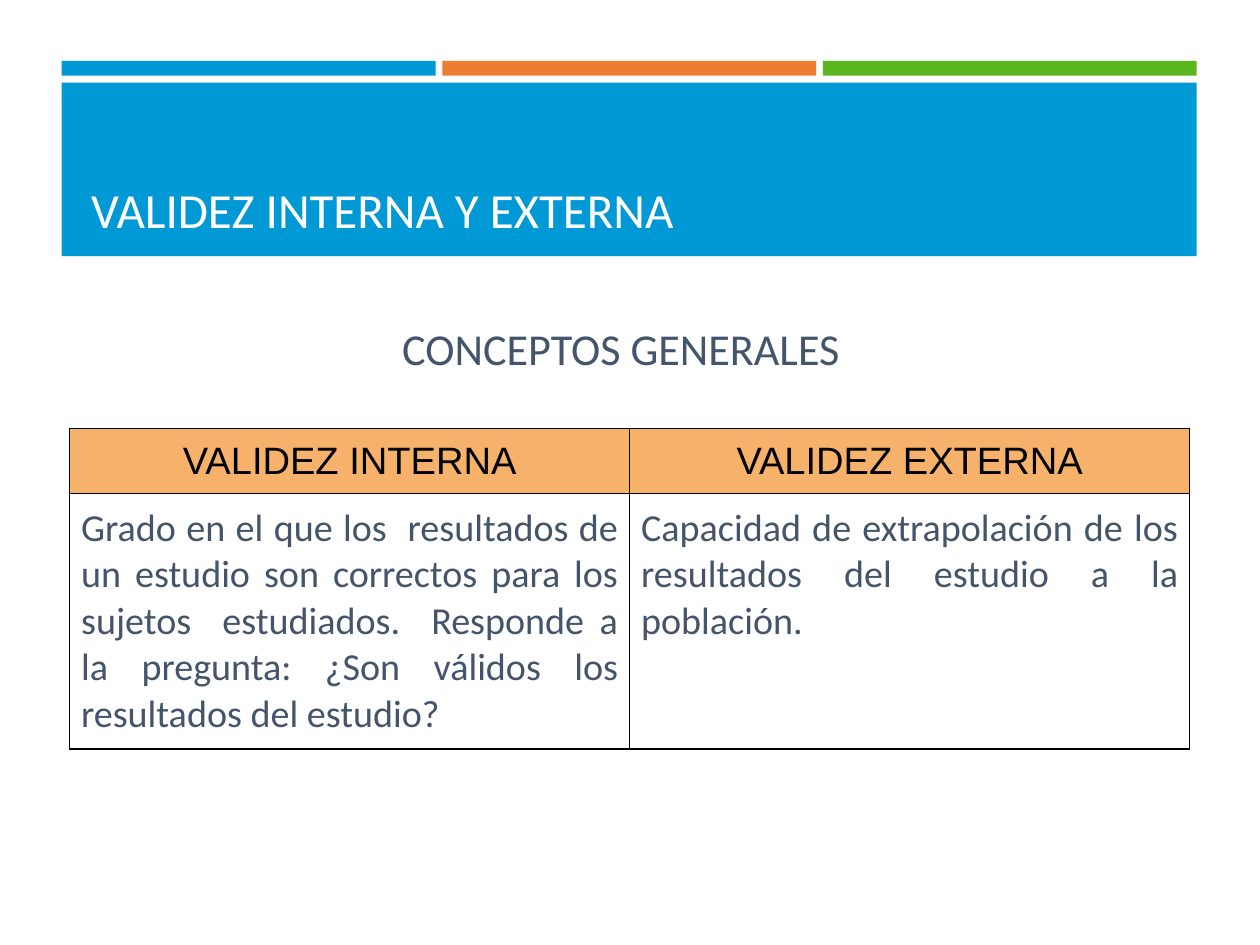
from pptx import Presentation
from pptx.dml.color import RGBColor
from pptx.enum.shapes import MSO_SHAPE as Shape
from pptx.enum.text import MSO_ANCHOR as Anchor, PP_ALIGN as Align
from pptx.oxml import parse_xml
from pptx.oxml.ns import nsdecls
from pptx.util import Pt

COLORS = {"blue": "0099D5", "orange": "ED7D31", "green": "5BB51C", "peach": "F6B26B",
          "slate": "44546A", "white": "FFFFFF", "black": "000000"}
TITLE = "VALIDEZ INTERNA Y EXTERNA"
SUBTITLE = "CONCEPTOS GENERALES"
CONCEPTS = [
    ("VALIDEZ INTERNA", "VALIDEZ EXTERNA"),
    ("Grado en el que los  resultados de un estudio son correctos para los sujetos  estudiados.  "
     "Responde a la pregunta: ¿Son válidos los resultados del estudio?",
     "Capacidad de extrapolación de los resultados del estudio a la población."),
]
ROW_STYLES = [("Arial", "black", Align.CENTER, 0), ("Calibri", "slate", Align.JUSTIFY, 3.6)]
ROW_HEIGHTS = [40.4, 161]
BOTTOM_MARGINS = [4.8, 7.2]
COLUMN_WIDTH = 352.8
STRIPES = ["blue", "orange", "green"]
BANNER_LEFT, BANNER_WIDTH, STRIPE_GAP = 38.9, 715, 4.2


def color(name):
    """Return the named colour."""
    return RGBColor.from_string(COLORS[name])


def add_block(page, left, top, width, height, fill):
    """Draw a plain filled rectangle."""
    block = page.shapes.add_shape(Shape.RECTANGLE, Pt(left), Pt(top), Pt(width), Pt(height))
    block.shadow.inherit = False
    block.fill.solid()
    block.fill.fore_color.rgb = color(fill)
    block.line.fill.background()


def write(frame, text, size, font, ink, align, before=0, after=0):
    """Write one styled paragraph."""
    para = frame.paragraphs[0]
    para.alignment = align
    para.space_before, para.space_after = Pt(before), Pt(after)
    span = para.add_run()
    span.text = text
    span.font.size, span.font.name = Pt(size), font
    span.font.color.rgb = color(ink)


def add_text(page, left, top, width, height, anchor, *style):
    """Add a wrapped text box."""
    box = page.shapes.add_textbox(Pt(left), Pt(top), Pt(width), Pt(height))
    box.text_frame.word_wrap = True
    box.text_frame.vertical_anchor = anchor
    write(box.text_frame, *style)


def add_borders(cell):
    """Give a cell thin black borders, placed before its fill."""
    properties = cell._tc.get_or_add_tcPr()
    for index, side in enumerate(("lnL", "lnR", "lnT", "lnB")):
        properties.insert(index, parse_xml(
            f'<a:{side} {nsdecls("a")} w="9525"><a:solidFill>'
            f'<a:srgbClr val="{COLORS["black"]}"/></a:solidFill></a:{side}>'))


def add_concepts(page):
    """Add the table comparing both kinds of validity."""
    table = page.shapes.add_table(2, 2, Pt(43.9), Pt(270), Pt(2 * COLUMN_WIDTH),
                                  Pt(sum(ROW_HEIGHTS))).table
    for column in table.columns:
        column.width = Pt(COLUMN_WIDTH)
    for row, height, bottom, texts, style in zip(
            table.rows, ROW_HEIGHTS, BOTTOM_MARGINS, CONCEPTS, ROW_STYLES):
        row.height = Pt(height)
        for cell, text in zip(row.cells, texts):
            cell.margin_left = cell.margin_right = cell.margin_top = Pt(7.2)
            cell.margin_bottom = Pt(bottom)
            if texts is CONCEPTS[0]:
                cell.fill.solid()
                cell.fill.fore_color.rgb = color("peach")
            else:
                cell.fill.background()
            add_borders(cell)
            write(cell.text_frame, text, 24, *style)


def main():
    """Build and save the slide."""
    deck = Presentation()
    deck.slide_width, deck.slide_height = Pt(793.75), Pt(595.25)
    page = deck.slides.add_slide(deck.slide_layouts[6])
    stripe_width = (BANNER_WIDTH - 2 * STRIPE_GAP) / 3
    for index, fill in enumerate(STRIPES):
        left = BANNER_LEFT + index * (stripe_width + STRIPE_GAP)
        add_block(page, left, 38.4, stripe_width, 9.2, fill)
    add_block(page, BANNER_LEFT, 52, BANNER_WIDTH, 109.4, "blue")
    add_text(page, 50.4, 59.4, 693.4, 94.3, Anchor.BOTTOM,
             TITLE, 30.9, "Calibri", "white", Align.LEFT)
    add_text(page, 44.6, 178.6, 693.4, 80.6, Anchor.MIDDLE,
             SUBTITLE, 27.8, "Calibri", "slate", Align.CENTER, 3.6, 6.6)
    add_concepts(page)
    deck.save("out.pptx")


if __name__ == "__main__":
    main()
